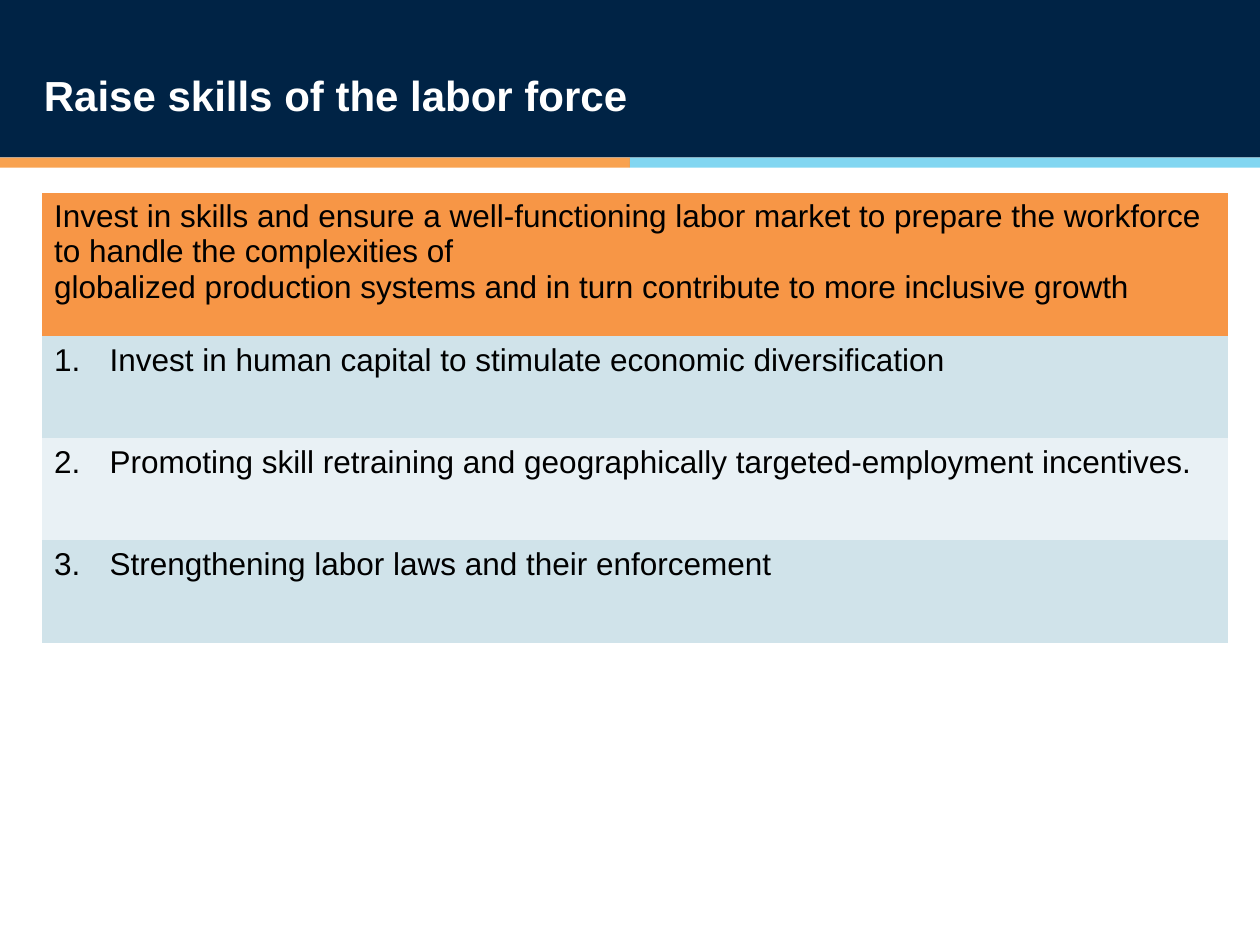
import pptx
import pptx.util
import pptx.dml.color
import pptx.enum.shapes
import pptx.enum.text
import pptx.oxml.ns
import lxml.etree

Inches = pptx.util.Inches
qn = pptx.oxml.ns.qn


def tint(part, code):
    part.fill.solid()
    part.fill.fore_color.rgb = pptx.dml.color.RGBColor.from_string(code)


def write(frame, text, size=18, color="000000", bold=False):
    frame.word_wrap = True
    frame.text = text
    for para in frame.paragraphs:
        font = para.runs[0].font
        font.name = "Arial"
        font.size = pptx.util.Pt(size)
        font.bold = bold
        tint(font, color)


deck = pptx.Presentation()
deck.slide_width = Inches(10)
deck.slide_height = Inches(7.5)
slide = deck.slides.add_slide(deck.slide_layouts[6])

bars = [
    (0, 0, 10, 1.25, "002345", 100),
    (0, 1.25, 5, 0.08, "F78D28", 81),
    (5, 1.25, 5, 0.08, "00ADE4", 49),
]
for left, top, width, height, color, alpha in bars:
    bar = slide.shapes.add_shape(
        pptx.enum.shapes.MSO_SHAPE.RECTANGLE,
        Inches(left), Inches(top), Inches(width), Inches(height))
    bar.shadow.inherit = False
    bar.line.fill.background()
    tint(bar, color)
    if alpha < 100:
        node = bar.element.spPr.find(qn("a:solidFill"))[0]
        lxml.etree.SubElement(node, qn("a:alpha"), val=str(alpha * 1000))

title = slide.shapes.add_textbox(Inches(0.25), Inches(0.13), Inches(9.25), Inches(1.25))
title.text_frame.vertical_anchor = pptx.enum.text.MSO_ANCHOR.MIDDLE
write(title.text_frame, "Raise skills of the labor force", size=24, color="FFFFFF", bold=True)

goal = (
    "Invest in skills and ensure a well-functioning labor market to prepare the workforce "
    "to handle the complexities of\n"
    "globalized production systems and in turn contribute to more inclusive growth"
)
steps = [
    "Invest in human capital to stimulate economic diversification",
    "Promoting skill retraining and geographically targeted-employment incentives.",
    "Strengthening labor laws and their enforcement",
]
frame = slide.shapes.add_table(
    len(steps) + 1, 2, Inches(0.33), Inches(1.53), Inches(9.42), Inches(3.57))
table = frame.table
table.first_row = False
table.horz_banding = False
style = next(frame.element.iter(qn("a:tableStyleId")))
style.text = "{2D5ABB26-0587-4C30-8999-92F81FD0307C}"
table.columns[0].width = Inches(0.44)
table.columns[1].width = Inches(8.98)

table.rows[0].height = Inches(1.14)
head = table.cell(0, 0)
head.merge(table.cell(0, 1))
tint(head, "F79646")
write(head.text_frame, goal)

for row, step in enumerate(steps, 1):
    table.rows[row].height = Inches(0.81)
    for col, text in enumerate([f"{row}.", step]):
        cell = table.cell(row, col)
        tint(cell, "D0E3EA" if row % 2 else "E9F1F5")
        write(cell.text_frame, text)

deck.save("out.pptx")
